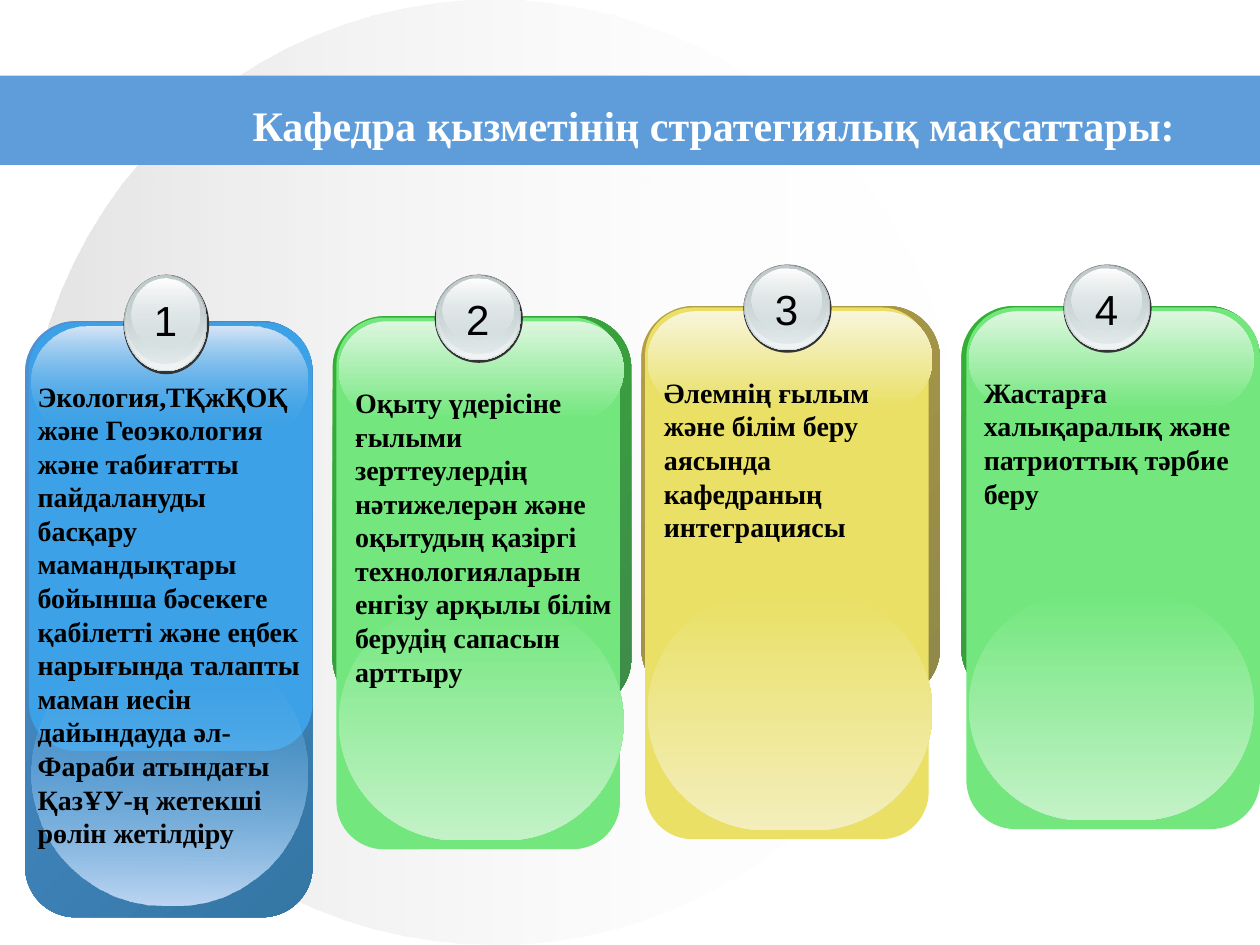
"""Build the slide of four numbered goal cards."""
from dataclasses import dataclass
from typing import NamedTuple, Optional

from lxml.etree import SubElement
from pptx import Presentation
from pptx.dml.color import RGBColor
from pptx.enum.shapes import MSO_SHAPE as Preset
from pptx.enum.text import MSO_ANCHOR as Anchor, MSO_AUTO_SIZE as AutoSize, PP_ALIGN as Align
from pptx.oxml.ns import qn
from pptx.util import Inches, Pt

COLUMNS, ROWS = 100, 75
WIDTH, HEIGHT = Inches(10), Inches(7.5)
SERIF, SANS = "Times New Roman", "Arial"
COLORS = {
    "white": "FFFFFF", "black": "000000", "silver": "C0C0C0", "band": "5E9CDA",
    "rim": "333333", "steel": "99A1A2", "mist": "D6E1E2", "frost": "F2F5F5", "ash": "C1CBCC",
    "blue": "3CA1E6", "blue_start": "4E91D4", "blue_end": "3477A4",
    "blue_glow": "BDD6F3", "blue_shine": "D7E5F7",
    "green": "73E77E", "green_start": "34B034", "green_end": "3F8B4A",
    "green_glow": "C3F2C7", "green_shine": "DDF7DF",
    "yellow": "E9E065", "yellow_start": "B59F43", "yellow_end": "8F8849",
    "yellow_glow": "F3EEBB", "yellow_shine": "F8F5DB",
}


class Area(NamedTuple):
    left: float
    top: float
    width: float
    height: float

    def shifted(self, left: float, top: float) -> "Area":
        return self._replace(left=self.left + left, top=self.top + top)

    def portion(self, share: "Area") -> "Area":
        return Area(self.left + share.left * self.width, self.top + share.top * self.height,
                    share.width * self.width, share.height * self.height)


class Paint(NamedTuple):
    start: str
    end: Optional[str] = None
    angle: int = 90
    start_alpha: int = 100
    end_alpha: int = 100


class Style(NamedTuple):
    size: int
    font: str
    color: str
    bold: bool = False


@dataclass(frozen=True)
class Frame:
    """Card parts, placed in columns and rows from the card's corner."""
    back: Area
    body: Area
    glow: Area
    shine: Area
    badge: Area
    words: Area
    fade: int = 100


@dataclass(frozen=True)
class Card:
    left: float
    top: float
    hue: str
    frame: Frame
    lines: tuple[str, ...]


TALL = Frame(Area(0, 0, 22.8, 47.3), Area(0.3, 0.1, 22.5, 34), Area(0.5, 25.3, 21.9, 21.1),
             Area(0.5, 0.4, 21.9, 8.7), Area(7.8, -3.7, 6.8, 7.9), Area(0, 4.1, 22.8, 41.4), 0)
MIDDLE = Frame(Area(0, 0, 23.7, 31.3), Area(0.3, 0.1, 22.5, 42.2), Area(0.5, 22.7, 22.6, 18.9),
               Area(0.5, 0.4, 22.6, 7.7), Area(8.1, -3.3, 7, 7), Area(0.8, 5, 22.5, 25.2))
LAST = Frame(MIDDLE.back, Area(0.4, 0.1, 23.3, 41.4), Area(0.6, 22.7, 22.6, 18.1),
             Area(0.6, 0.4, 22.6, 7.7), MIDDLE.badge, MIDDLE.words)
CARDS = (
    Card(2, 25.5, "blue", TALL, (
        "Экология,ТҚжҚОҚ",
        "және Геоэкология және табиғатты пайдалануды басқару мамандықтары бойынша бәсекеге "
        "қабілетті және еңбек нарығында талапты маман иесін дайындауда әл-Фараби атындағы "
        "ҚазҰУ-ң жетекші рөлін жетілдіру")),
    Card(26.4, 25.1, "green", MIDDLE, (
        "Оқыту үдерісіне ғылыми зерттеулердің нәтижелерән және оқытудың қазіргі "
        "технологияларын енгізу арқылы білім берудің сапасын арттыру",)),
    Card(50.9, 24.3, "yellow", MIDDLE, (
        "Әлемнің ғылым және білім беру аясында кафедраның интеграциясы",)),
    Card(76.3, 24.3, "green", LAST, (
        "Жастарға халықаралық және патриоттық тәрбие беру",)),
)
BADGE_LAYERS = (
    (Area(0, 0, 1, 1), Paint("rim")),
    (Area(0.01, 0, 0.97, 0.97), Paint("steel", "mist")),
    (Area(0.02, 0.01, 0.94, 0.94), Paint("mist", "frost", start_alpha=0)),
    (Area(0.04, 0.01, 0.9, 0.88), Paint("ash", "mist", end_alpha=48)),
    (Area(0.09, 0.04, 0.8, 0.71), Paint("white", "mist", end_alpha=38)),
)
NUMBER_SHARE = Area(0.21, 0.14, 0.56, 0.71)
TITLE_STYLE = Style(24, SERIF, "white", True)
NUMBER_STYLE = Style(24, SANS, "black")
WORDS_STYLE = Style(16, SERIF, "black", True)


def place(area: Area) -> tuple[int, int, int, int]:
    return (round(area.left * WIDTH / COLUMNS), round(area.top * HEIGHT / ROWS),
            round(area.width * WIDTH / COLUMNS), round(area.height * HEIGHT / ROWS))


def rgb(name: str) -> RGBColor:
    return RGBColor.from_string(COLORS[name])


def add_form(page, preset, area: Area, paint: Paint, rounding: Optional[float] = None) -> None:
    form = page.shapes.add_shape(preset, *place(area))
    form.shadow.inherit = False
    form.line.fill.background()
    if rounding is not None:
        form.adjustments[0] = rounding
    if paint.end is None:
        form.fill.solid()
        form.fill.fore_color.rgb = rgb(paint.start)
        return
    form.fill.gradient()
    form.fill.gradient_angle = (360 - paint.angle) % 360
    stops = form.fill.gradient_stops
    for stop, name, position in zip(stops, (paint.start, paint.end), (0, 1)):
        stop.color.rgb = rgb(name)
        stop.position = position
    tints = form.element.spPr.iter(qn("a:srgbClr"))
    for tint, alpha in zip(tints, (paint.start_alpha, paint.end_alpha)):
        if alpha < 100:
            SubElement(tint, qn("a:alpha")).set("val", str(alpha * 1000))


def add_words(page, area: Area, lines: tuple[str, ...], style: Style, align=Align.LEFT,
              anchor=Anchor.TOP, wrap: bool = True, fit=AutoSize.SHAPE_TO_FIT_TEXT) -> None:
    box = page.shapes.add_textbox(*place(area))
    frame = box.text_frame
    frame.word_wrap = wrap
    frame.auto_size = fit
    frame.vertical_anchor = anchor
    para = frame.paragraphs[0]
    para.alignment = align
    for index, line in enumerate(lines):
        if index:
            para.add_line_break()
        span = para.add_run()
        span.text = line
        span.font.size = Pt(style.size)
        span.font.name = style.font
        span.font.bold = style.bold
        span.font.color.rgb = rgb(style.color)


def add_card(page, card: Card, number: int) -> None:
    hue, frame = card.hue, card.frame
    layers = (
        (frame.back, Paint(f"{hue}_start", f"{hue}_end", 45), 0.175),
        (frame.body, Paint(hue), 0.167),
        (frame.glow, Paint(hue, f"{hue}_glow", start_alpha=frame.fade), 0.5),
        (frame.shine, Paint(f"{hue}_shine", hue, end_alpha=frame.fade), 0.5),
    )
    for area, paint, rounding in layers:
        add_form(page, Preset.ROUNDED_RECTANGLE, area.shifted(card.left, card.top), paint, rounding)
    badge = frame.badge.shifted(card.left, card.top)
    for share, paint in BADGE_LAYERS:
        add_form(page, Preset.OVAL, badge.portion(share), paint)
    add_words(page, badge.portion(NUMBER_SHARE), (str(number),), NUMBER_STYLE,
              Align.CENTER, wrap=False)
    add_words(page, frame.words.shifted(card.left, card.top), card.lines, WORDS_STYLE)


def main() -> None:
    deck = Presentation()
    deck.slide_width, deck.slide_height = WIDTH, HEIGHT
    page = deck.slides.add_slide(deck.slide_layouts[6])
    add_form(page, Preset.OVAL, Area(2, 0, 74.4, ROWS), Paint("silver", "white", 0, 44, 0))
    add_form(page, Preset.RECTANGLE, Area(0, 6, COLUMNS, 7.1), Paint("band"))
    add_words(page, Area(16.9, 5.2, 79.5, 9.4), ("Кафедра қызметінің стратегиялық мақсаттары:",),
              TITLE_STYLE, Align.CENTER, Anchor.MIDDLE, fit=AutoSize.NONE)
    for number, card in enumerate(CARDS, 1):
        add_card(page, card, number)
    deck.save("out.pptx")


if __name__ == "__main__":
    main()
